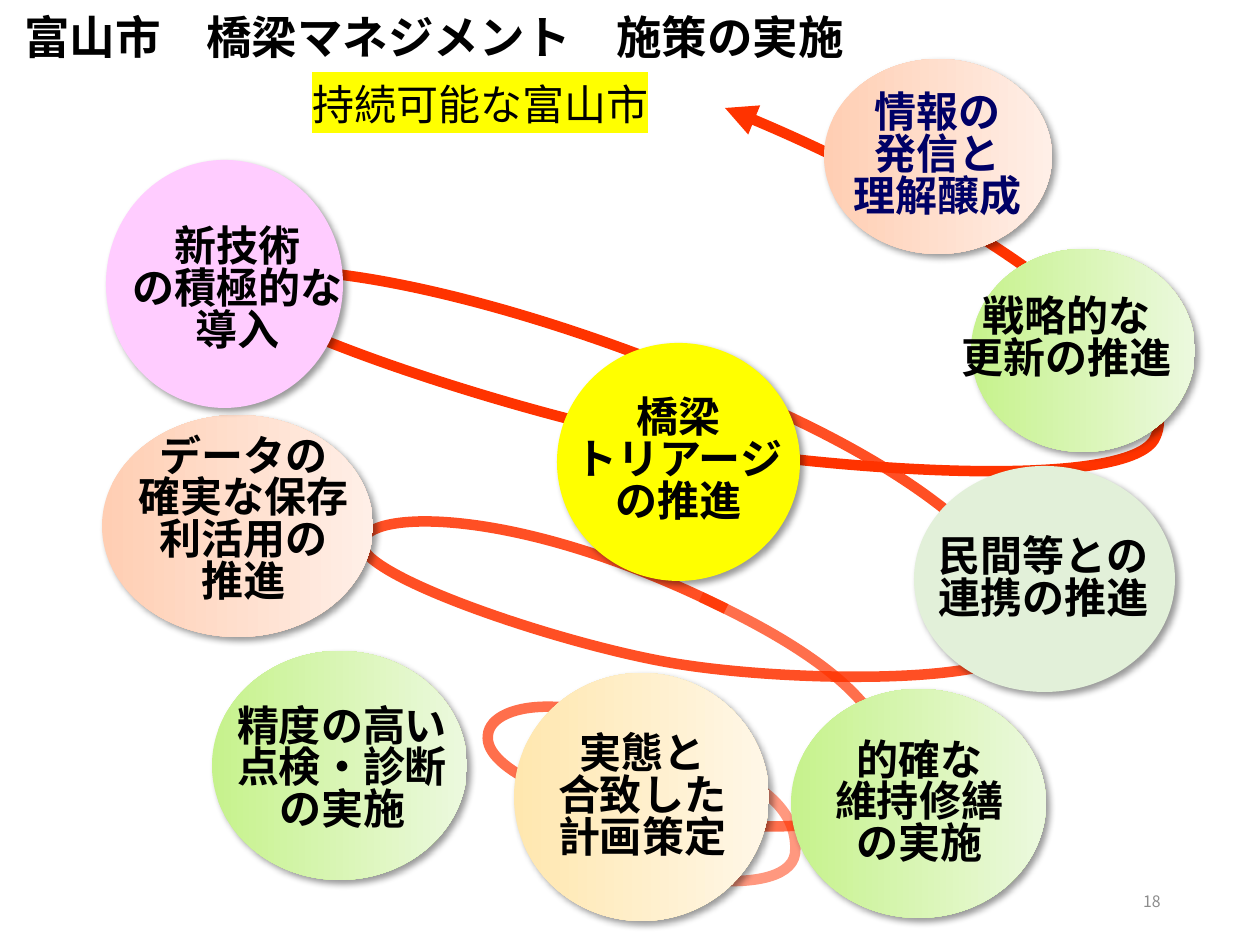
from pptx import Presentation
from pptx import util as u
from pptx.dml.color import RGBColor
from pptx.enum import shapes, text
from pptx.oxml import parse_xml
from pptx.oxml.ns import nsdecls
from pptx.oxml.xmlchemy import OxmlElement

PX = 914400 / 126
FONT = "Noto Sans CJK JP"
GREEN, PEACH, CREAM = ("C6F28C", "ECF9DE"), ("FFCEB3", "FFEFE7"), ("FFE7AF", "FFF7E7")
rgb = RGBColor.from_string


def px(*lengths):
    """Turn lengths in px into a list of EMU."""
    return [u.Emu(round(length * PX)) for length in lengths]


def write(parent, frame, lines, size=24, color="000000", bold=False, align="CENTER",
          anchor="MIDDLE", spacing=None, top=6, bottom=6, highlight=None):
    box = parent.add_textbox(*px(*frame)).text_frame
    box.word_wrap = True
    box.vertical_anchor = getattr(text.MSO_ANCHOR, anchor)
    box.margin_top, box.margin_bottom = px(top, bottom)
    for index, line in enumerate(lines):
        para = box.paragraphs[0] if index == 0 else box.add_paragraph()
        para.alignment = getattr(text.PP_ALIGN, align)
        if spacing:
            para.line_spacing = spacing
        span = para.add_run()
        span.text = line
        span.font.size = u.Pt(size)
        span.font.bold = bold
        span.font.color.rgb = rgb(color)
        span.font.name = FONT
        props = span._r.get_or_add_rPr()
        east_asian = OxmlElement("a:ea")
        east_asian.set("typeface", FONT)
        props.find("{*}latin").addnext(east_asian)
        if highlight:
            props.find("{*}solidFill").addnext(parse_xml(
                f'<a:highlight {nsdecls("a")}><a:srgbClr val="{highlight}"/></a:highlight>'))


deck = Presentation()
deck.slide_width, deck.slide_height = px(1260, 945)
page = deck.slides.add_slide(deck.slide_layouts[6])

# Red ribbon: start point, then three points for each Bézier curve
ribbons = [
    (85, False, [(706, 381), (958, 480), (1048, 590), (1024, 645),
                 (1005, 685), (795, 682), (684, 665),
                 (575, 649), (358, 577), (362, 543),
                 (365, 509), (518, 505), (726, 609)]),
    (100, True, [(725, 108), (974, 207), (1193, 370), (1154, 440),
                 (1121, 491), (834, 470), (682, 444),
                 (528, 418), (231, 320), (234, 286),
                 (238, 252), (445, 270), (723, 388)]),
    (70, False, [(701, 597), (863, 672), (900, 733), (886, 784),
                 (871, 827), (789, 834), (679, 820),
                 (570, 808), (483, 769), (488, 735),
                 (491, 701), (585, 684), (721, 765)]),
    (50, False, [(718, 764), (746, 780), (800, 803), (795, 854),
                 (791, 879), (746, 886), (690, 878)]),
]
ribbon_group = page.shapes.add_group_shape()
for opacity, has_arrow, points in ribbons:
    builder = ribbon_group.shapes.build_freeform(*points[0], scale=PX)
    builder.add_line_segments(points[1:], close=False)
    ribbon = builder.convert_to_shape()
    segments = ribbon._element.xpath(".//a:lnTo")
    for start in range(0, len(segments), 3):
        curve = OxmlElement("a:cubicBezTo")
        segments[start].addprevious(curve)
        for segment in segments[start:start + 3]:
            curve.append(segment[0])
            segment.getparent().remove(segment)
    ribbon.shadow.inherit = False
    ribbon.fill.background()
    ribbon.line.width = u.Pt(6)
    ribbon.line.color.rgb = rgb("FF3300")
    if opacity < 100:
        alpha = OxmlElement("a:alpha")
        alpha.set("val", str(opacity * 1000))
        ribbon._element.xpath(".//a:ln//a:srgbClr")[0].append(alpha)
    if has_arrow:
        head = OxmlElement("a:headEnd")
        head.set("type", "triangle")
        ribbon.line._get_or_add_ln().append(head)

write(page.shapes, (890, 876, 283, 50), ["18"], size=9, color="8C8C8C", align="RIGHT")

# Measures: ellipse frame, left and top of its label, fill, label colour, label
measures = [
    ((212, 651, 255, 229), (189, 633), GREEN, "000000", ["精度の高い", "点検・診断", "の実施"]),
    ((971, 249, 224, 203), (932, 218), GREEN, "000000", ["戦略的な", "更新の推進"]),
    ((514, 673, 255, 248), (489, 649), CREAM, "000000", ["実態と", "合致した", "計画策定"]),
    ((824, 59, 228, 195), (801, 40), PEACH, "000066", ["情報の", "発信と", "理解醸成"]),
    ((557, 343, 243, 238), (533, 319), ("FFFF00",), "000000", ["橋梁", "トリアージ", "の推進"]),
    ((102, 415, 271, 222), (81, 388), PEACH, "000000",
     ["データの", "確実な保存", "利活用の", "推進"]),
    ((106, 160, 237, 248), (95, 142), ("FFCCFF",), "000000", ["新技術", "の積極的な", "導入"]),
    ((914, 466, 261, 226), (887, 444), ("E2F0D9",), "000000", ["民間等との", "連携の推進"]),
    ((791, 689, 255, 229), (766, 667), GREEN, "000000", ["的確な", "維持修繕", "の実施"]),
]
for frame, label_corner, colors, label_color, label in measures:
    group = page.shapes.add_group_shape()
    ellipse = group.shapes.add_shape(shapes.MSO_SHAPE.OVAL, *px(*frame))
    ellipse.line.fill.background()
    if len(colors) == 1:
        ellipse.fill.solid()
        ellipse.fill.fore_color.rgb = rgb(colors[0])
    else:
        ellipse.fill.gradient()
        ellipse.fill.gradient_angle = 0
        for stop, color in zip(ellipse.fill.gradient_stops, colors):
            stop.color.rgb = rgb(color)
    ellipse.shadow.inherit = False
    ellipse._element.spPr.find("{*}effectLst").append(parse_xml(
        f'<a:outerShdw {nsdecls("a")} blurRad="{u.Pt(4)}" dist="{u.Pt(3)}" dir="2700000">'
        '<a:srgbClr val="000000"><a:alpha val="40000"/></a:srgbClr></a:outerShdw>'))
    label_size = [1.2 * side for side in frame[2:]]
    write(group.shapes, (*label_corner, *label_size), label,
          color=label_color, bold=True, spacing=0.83)

write(page.shapes, (-63, 10, 995, 81), ["富山市　橋梁マネジメント　施策の実施"],
      size=26, bold=True, top=0, bottom=28)
write(page.shapes, (300, 79, 367, 63), ["持続可能な富山市"], align="LEFT", anchor="TOP",
      top=0, bottom=0, highlight="FFFF00")

deck.save("out.pptx")
